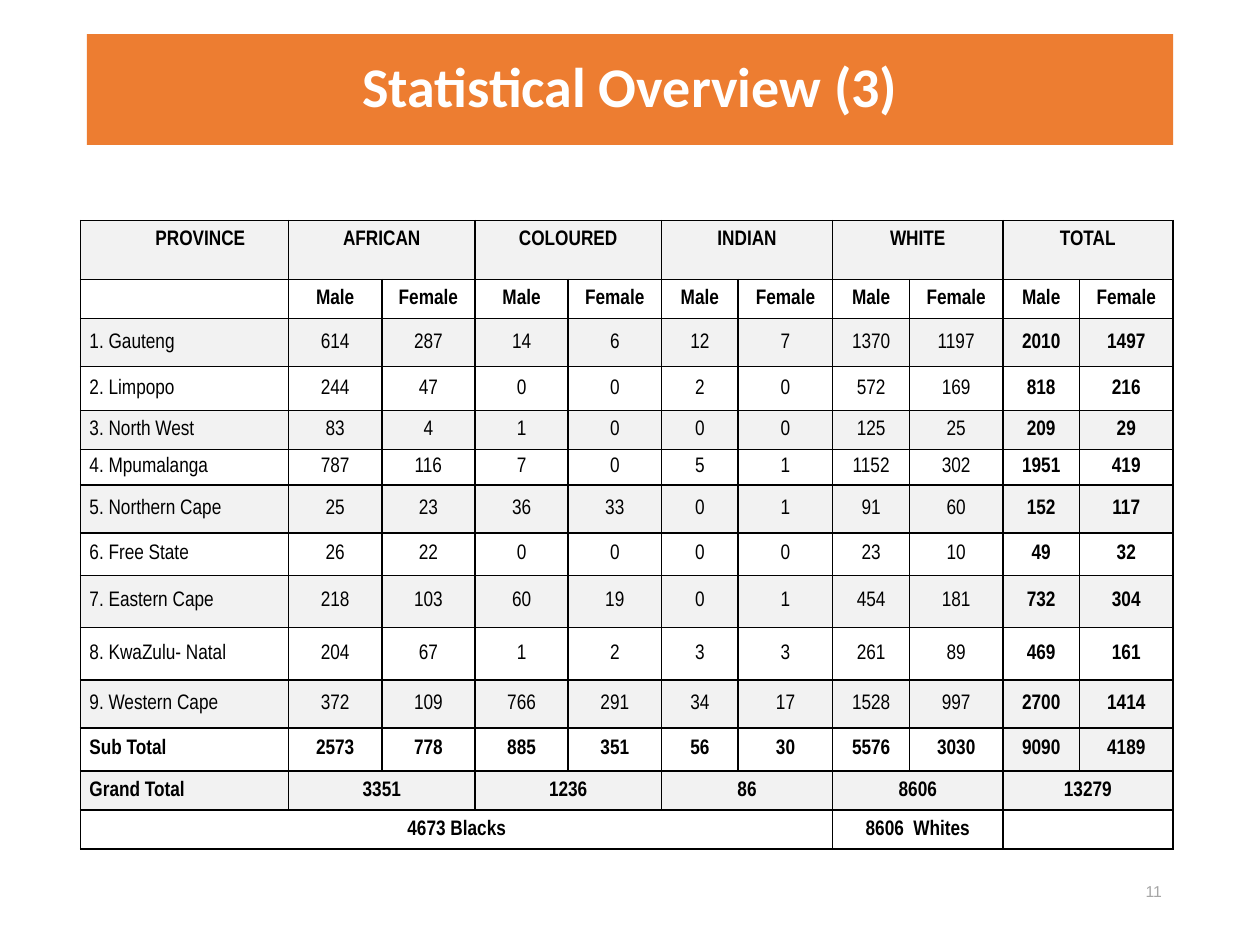
from pptx import Presentation
from pptx.dml.color import RGBColor as RGB
from pptx.enum.shapes import MSO_SHAPE
from pptx.enum.text import MSO_ANCHOR as ANCHOR, PP_ALIGN as ALIGN
from pptx.oxml import parse_xml
from pptx.oxml.ns import nsdecls
from pptx.util import Inches, Pt

TITLE = "Statistical Overview (3)"
PAGE = "11"
GROUPS = ["AFRICAN", "COLOURED", "INDIAN", "WHITE", "TOTAL"]
PROVINCES = [
    ("1. Gauteng", 614, 287, 14, 6, 12, 7, 1370, 1197, 2010, 1497),
    ("2. Limpopo", 244, 47, 0, 0, 2, 0, 572, 169, 818, 216),
    ("3. North West", 83, 4, 1, 0, 0, 0, 125, 25, 209, 29),
    ("4. Mpumalanga", 787, 116, 7, 0, 5, 1, 1152, 302, 1951, 419),
    ("5. Northern Cape", 25, 23, 36, 33, 0, 1, 91, 60, 152, 117),
    ("6. Free State", 26, 22, 0, 0, 0, 0, 23, 10, 49, 32),
    ("7. Eastern Cape", 218, 103, 60, 19, 0, 1, 454, 181, 732, 304),
    ("8. KwaZulu- Natal", 204, 67, 1, 2, 3, 3, 261, 89, 469, 161),
    ("9. Western Cape", 372, 109, 766, 291, 34, 17, 1528, 997, 2700, 1414),
]
SUB_TOTAL = ("Sub Total", 2573, 778, 885, 351, 56, 30, 5576, 3030, 9090, 4189)
GRAND_TOTAL = [3351, 1236, 86, 8606, 13279]
FOOTER = [("4673 Blacks", 7), ("8606  Whites", 2), ("", 2)]

COLS = [1.65, 0.74, 0.74, 0.74, 0.74, 0.61, 0.75, 0.61, 0.74, 0.61, 0.74]
ROWS = [0.47, 0.31, 0.38, 0.35, 0.31, 0.28, 0.38, 0.34, 0.41, 0.42, 0.38, 0.34, 0.31, 0.31]
THEME = {
    "title": ("Calibri", 32, RGB(255, 255, 255), True),
    "page": ("Arial", 9, RGB(0xA6, 0xA6, 0xA6), False),
    "cell": ("Arial Narrow", 12, RGB(0, 0, 0), False),
    "strong": ("Arial Narrow", 12, RGB(0, 0, 0), True),
    "banner": RGB(0xED, 0x7D, 0x31),
    "band": RGB(0xF2, 0xF2, 0xF2),
    "border": "000000",
}


def write(tf, text, style, align, spacing=None):
    p = tf.paragraphs[0]
    p.alignment = align
    p.line_spacing = spacing
    if text:
        r = p.add_run()
        r.text = text
        r.font.name, size, r.font.color.rgb, r.font.bold = THEME[style]
        r.font.size = Pt(size)


def paired(first, values):
    return [(first, 1)] + [(v, 2) for v in values]


def single(values):
    return [(v, 1) for v in values]


def format_cell(cell, shaded):
    tcPr = cell._tc.get_or_add_tcPr()
    for side in ("lnL", "lnR", "lnT", "lnB"):
        tcPr.append(parse_xml(
            f'<a:{side} {nsdecls("a")} w="{Pt(1)}"><a:solidFill>'
            f'<a:srgbClr val="{THEME["border"]}"/></a:solidFill></a:{side}>'))
    cell.margin_left = cell.margin_right = Inches(0.07)
    cell.margin_top = cell.margin_bottom = 0
    if shaded:
        cell.fill.solid()
        cell.fill.fore_color.rgb = THEME["band"]
    else:
        cell.fill.background()


def add_statistics(s):
    rows = [paired("PROVINCE", GROUPS), single([""] + ["Male", "Female"] * len(GROUPS))]
    rows += [single(row) for row in PROVINCES + [SUB_TOTAL]]
    rows += [paired("Grand Total", GRAND_TOTAL), FOOTER]
    sub_row = 2 + len(PROVINCES)
    total_col = len(COLS) - 2

    table = s.shapes.add_table(len(ROWS), len(COLS), Inches(0.64), Inches(1.75),
                               Inches(sum(COLS)), Inches(sum(ROWS))).table
    table.first_row = table.horz_banding = False
    for col, width in zip(table.columns, COLS):
        col.width = Inches(width)
    for row, height in zip(table.rows, ROWS):
        row.height = Inches(height)

    for i, row in enumerate(rows):
        for j in range(len(COLS)):
            format_cell(table.cell(i, j), i % 2 == 0 or (i == sub_row and j >= total_col))
        body = 2 <= i <= sub_row
        j = 0
        for value, span in row:
            cell = table.cell(i, j)
            if span > 1:
                cell.merge(table.cell(i, j + span - 1))
            cell.vertical_anchor = ANCHOR.MIDDLE if body else ANCHOR.TOP
            strong = not 2 <= i < sub_row or j >= total_col
            left = j == 0 and 2 <= i <= sub_row + 1
            write(cell.text_frame, str(value), "strong" if strong else "cell",
                  ALIGN.LEFT if left else ALIGN.CENTER, None if body else 1.5)
            j += span
    heading = table.cell(0, 0).text_frame.paragraphs[0]
    heading._p.get_or_add_pPr().set("marL", str(Inches(0.25)))


def main():
    """Build the Statistical Overview slide with its table by province."""
    prs = Presentation()
    prs.slide_width, prs.slide_height = Inches(10), Inches(7.5)
    s = prs.slides.add_slide(prs.slide_layouts[6])

    page = s.shapes.add_textbox(Inches(8.11), Inches(6.95), Inches(1.21), Inches(0.4))
    page.text_frame.word_wrap = True
    write(page.text_frame, PAGE, "page", ALIGN.RIGHT)

    add_statistics(s)

    banner = s.shapes.add_shape(MSO_SHAPE.RECTANGLE, Inches(0.69), Inches(0.27),
                                Inches(8.62), Inches(0.88))
    banner.shadow.inherit = False
    banner.fill.solid()
    banner.fill.fore_color.rgb = THEME["banner"]
    banner.line.fill.background()
    banner.text_frame.vertical_anchor = ANCHOR.MIDDLE
    write(banner.text_frame, TITLE, "title", ALIGN.CENTER, 0.9)

    prs.save("out.pptx")


if __name__ == "__main__":
    main()
